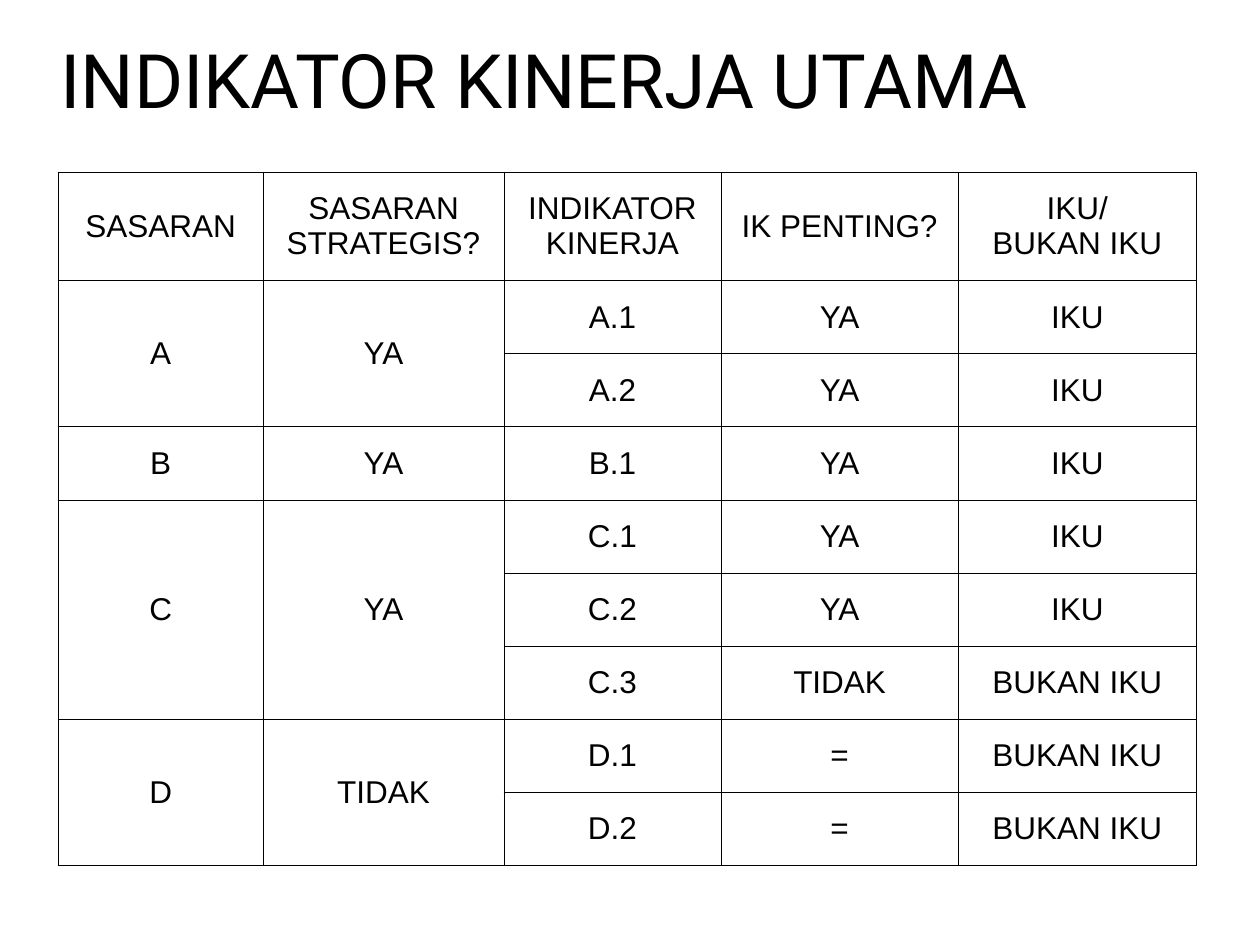
from lxml.etree import SubElement
from pptx import Presentation
from pptx.dml.color import RGBColor
from pptx.enum.text import MSO_ANCHOR, MSO_AUTO_SIZE, PP_ALIGN
from pptx.oxml.ns import qn
from pptx.util import Pt

INK, PAPER = "000000", "FFFFFF"
PAD = 10.8
WIDTHS = [117.2, 137.6, 124, 135.7, 136]
HEAD, ROW = 61.7, 41.8

TITLES = ["SASARAN", "SASARAN STRATEGIS?", "INDIKATOR KINERJA",
          "IK PENTING?", "IKU/\nBUKAN IKU"]
# Each target: name, strategic or not, and its indicators
TARGETS = [
    ("A", "YA", [("A.1", "YA", "IKU"), ("A.2", "YA", "IKU")]),
    ("B", "YA", [("B.1", "YA", "IKU")]),
    ("C", "YA", [("C.1", "YA", "IKU"), ("C.2", "YA", "IKU"),
                 ("C.3", "TIDAK", "BUKAN IKU")]),
    ("D", "TIDAK", [("D.1", "=", "BUKAN IKU"), ("D.2", "=", "BUKAN IKU")]),
]


def color(code):
    return RGBColor.from_string(code)


def add_run(para, text, font, size):
    run = para.add_run()
    run.text = text
    run.font.name = font
    run.font.size = Pt(size)
    run.font.color.rgb = color(INK)


def add_edges(cell):
    props = cell._tc.get_or_add_tcPr()
    for spot, side in enumerate(("a:lnL", "a:lnR", "a:lnT", "a:lnB")):
        line = props.makeelement(qn(side), {"w": str(Pt(0.5))})
        fill = SubElement(line, qn("a:solidFill"))
        SubElement(fill, qn("a:srgbClr"), val=INK)
        props.insert(spot, line)


def style_cell(cell):
    cell.fill.solid()
    cell.fill.fore_color.rgb = color(PAPER)
    cell.vertical_anchor = MSO_ANCHOR.MIDDLE
    cell.margin_left = cell.margin_right = Pt(PAD)
    cell.margin_top = cell.margin_bottom = Pt(PAD)
    add_edges(cell)


def fill_cell(cell, text):
    frame = cell.text_frame
    for num, line in enumerate(text.split("\n")):
        para = frame.add_paragraph() if num else frame.paragraphs[0]
        para.alignment = PP_ALIGN.CENTER
        add_run(para, line, "Arial", 18)


def add_title(slide, left, top, width, height):
    title = slide.shapes.title
    title.left, title.top = Pt(left), Pt(top)
    title.width, title.height = Pt(width), Pt(height)
    frame = title.text_frame
    frame.auto_size = MSO_AUTO_SIZE.NONE
    frame.vertical_anchor = MSO_ANCHOR.MIDDLE
    para = frame.paragraphs[0]
    para.alignment = PP_ALIGN.LEFT
    add_run(para, "INDIKATOR KINERJA UTAMA", "Roboto", 42.9)


def add_grid(slide, left, top):
    count = 1 + sum(len(items) for _, _, items in TARGETS)
    height = HEAD + ROW * (count - 1)
    table = slide.shapes.add_table(count, len(WIDTHS), Pt(left), Pt(top),
                                   Pt(sum(WIDTHS)), Pt(height)).table
    table.first_row = table.horz_banding = False
    for col, width in zip(table.columns, WIDTHS):
        col.width = Pt(width)
    for num, row in enumerate(table.rows):
        row.height = Pt(ROW if num else HEAD)
    for cell in table.iter_cells():
        style_cell(cell)

    # Header row
    for col, text in enumerate(TITLES):
        fill_cell(table.cell(0, col), text)

    # Targets span the rows of their indicators
    row = 1
    for name, key, items in TARGETS:
        last = row + len(items) - 1
        for col, text in enumerate((name, key)):
            cell = table.cell(row, col)
            if last > row:
                cell.merge(table.cell(last, col))
            fill_cell(cell, text)
        for item in items:
            for col, text in enumerate(item, 2):
                fill_cell(table.cell(row, col), text)
            row += 1


def main():
    deck = Presentation()
    deck.slide_width, deck.slide_height = Pt(720), Pt(540)
    slide = deck.slides.add_slide(deck.slide_layouts[5])
    add_title(slide, 27.4, 15.1, 648, 59.8)
    add_grid(slide, 33.2, 98.4)
    deck.save("out.pptx")


if __name__ == "__main__":
    main()
